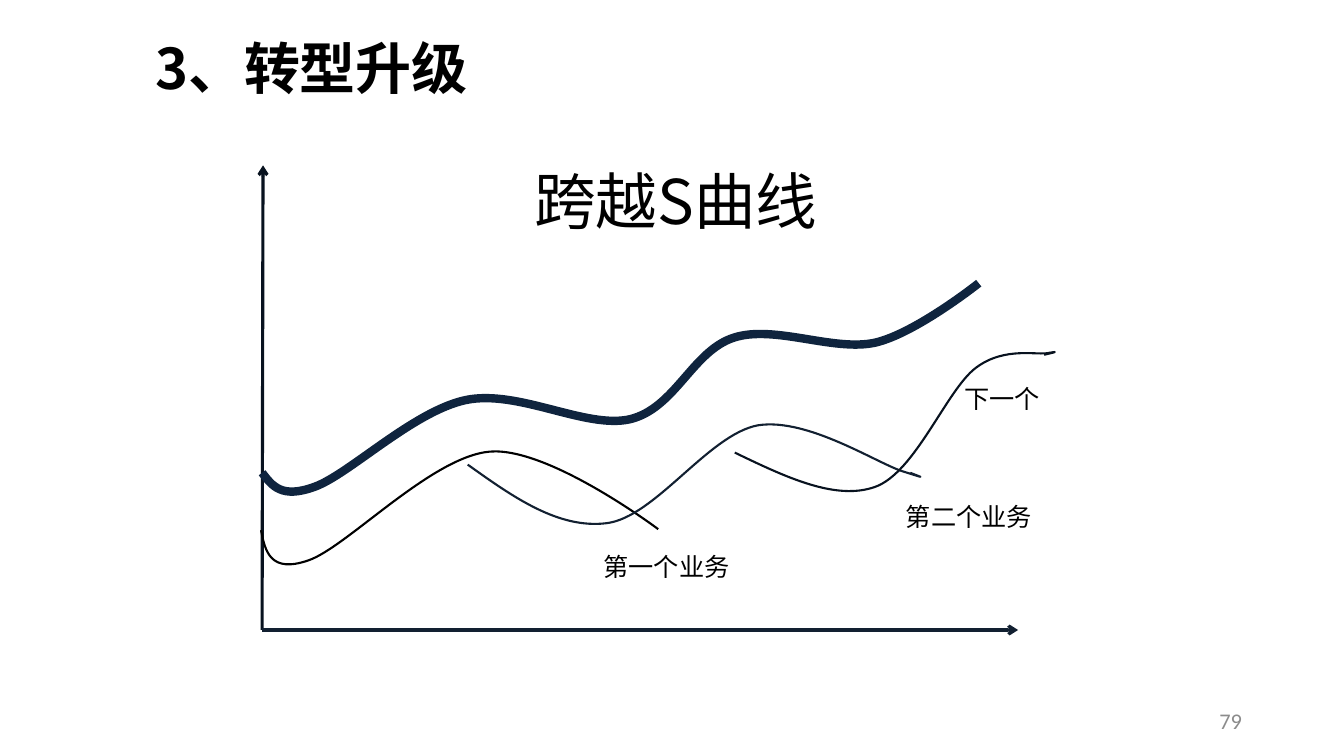
import pptx
import pptx.util
import pptx.dml.color
import pptx.enum.shapes
import pptx.enum.text
import pptx.oxml.ns
import pptx.oxml.xmlchemy

Pt = pptx.util.Pt
qn = pptx.oxml.ns.qn
make = pptx.oxml.xmlchemy.OxmlElement
Align = pptx.enum.text.PP_ALIGN
Anchor = pptx.enum.text.MSO_ANCHOR
HAN = "Noto Sans CJK SC"

TREND = [
    (187.2, 337.7), (194.4, 347), (200.9, 356.4), (224.6, 347.8),
    (249.1, 339.1), (295.2, 293.8), (332.6, 285.8),
    (370.1, 277.9), (418.3, 306.7), (450, 299.5),
    (482.4, 291.6), (494.6, 250.6), (524.2, 241.2),
    (553, 231.8), (595.4, 251.3), (625, 244.8),
    (653.8, 238.3), (699.1, 202.3), (699.1, 202.3),
]
FIRST = [
    (186.5, 378.7), (189.4, 393.8), (193, 409.7), (220.3, 400.3),
    (247.7, 391), (308.2, 326.2), (349.9, 322.6),
    (391.7, 319), (470.2, 378), (470.2, 378),
]
SECOND = [
    (334.1, 331.9), (366.5, 355), (398.9, 378), (433.4, 373.7),
    (468, 369.4), (506.2, 310.3), (541.4, 303.8),
    (577.4, 298.1), (627.8, 331.9), (645.8, 337),
    (663.8, 342.7), (657.4, 340.6), (650.2, 337.7),
]
NEXT = [
    (524.9, 323.3), (560.9, 340.6), (596.9, 357.8), (625, 347.8),
    (653.8, 337.7), (676.1, 278.6), (697, 262.8),
    (717.8, 247), (741.6, 254.2), (749.5, 252),
    (758.2, 250.6), (751.7, 252), (745.9, 253.4),
]


def paint(color, tone):
    color.rgb = pptx.dml.color.RGBColor.from_string(tone)


def stroke(line, tone, width):
    paint(line.color, tone)
    line.width = Pt(width)


def add_text(slide, words, box, size, align=Align.LEFT, anchor=Anchor.MIDDLE,
             font=HAN, tone="000000", bold=False):
    shape = slide.shapes.add_textbox(*map(Pt, box))
    frame = shape.text_frame
    frame.word_wrap = True
    frame.vertical_anchor = anchor
    frame.text = words
    frame.paragraphs[0].alignment = align
    run = frame.paragraphs[0].runs[0]
    run.font.name = font
    run.font.size = Pt(size)
    run.font.bold = bold
    paint(run.font.color, tone)
    east = make("a:ea")
    east.set("typeface", font)
    run.font._element.find(qn("a:latin")).addnext(east)
    return frame


def add_label(slide, words, left, top, width):
    frame = add_text(slide, words, (left, top, width, 29), 18, anchor=Anchor.TOP)
    frame.auto_size = pptx.enum.text.MSO_AUTO_SIZE.SHAPE_TO_FIT_TEXT


def add_axis(slide, start, end, tone):
    kind = pptx.enum.shapes.MSO_CONNECTOR.STRAIGHT
    axis = slide.shapes.add_connector(kind, *map(Pt, start + end))
    stroke(axis.line, tone, 2.25)
    tail = make("a:tailEnd")
    tail.set("type", "arrow")
    axis.line._get_or_add_ln().append(tail)
    axis._element.spPr.append(make("a:effectLst"))


def add_curve(slide, points, tone, width):
    spots = [(Pt(x), Pt(y)) for x, y in points]
    pen = slide.shapes.build_freeform(*spots[0])
    pen.add_line_segments(spots[1:], close=False)
    curve = pen.convert_to_shape()
    curve.shadow.inherit = False
    curve.fill.background()
    stroke(curve.line, tone, width)
    steps = curve._element.findall(".//" + qn("a:lnTo"))
    for i in range(0, len(steps), 3):
        bend = make("a:cubicBezTo")
        steps[i].addprevious(bend)
        for step in steps[i:i + 3]:
            bend.append(step[0])
            step.getparent().remove(step)


def main():
    deck = pptx.Presentation()
    deck.slide_width, deck.slide_height = Pt(960), Pt(540)
    slide = deck.slides.add_slide(deck.slide_layouts[6])

    add_text(slide, "跨越S曲线", (324.7, 112.3, 316, 60.5), 44, Align.CENTER)
    add_axis(slide, (187.2, 450), (187.9, 118.1), "08121F")
    add_axis(slide, (187.2, 450), (727.2, 450), "122031")
    add_curve(slide, TREND, "0F243E", 6)
    add_curve(slide, FIRST, "000000", 1.5)
    add_curve(slide, SECOND, "122031", 1.5)
    add_curve(slide, NEXT, "08121F", 1.5)
    add_label(slide, "第一个业务", 424, 390.2, 113.8)
    add_label(slide, "第二个业务", 640, 354.2, 113.8)
    add_label(slide, "下一个", 681.8, 270, 84.2)
    add_text(slide, "79", (678.2, 500.4, 216, 28.8), 16, Align.RIGHT,
             font="Calibri", tone="8C8C8C")
    add_text(slide, "3、转型升级", (103.7, 11.5, 506.2, 73.4), 40, bold=True)
    deck.save("out.pptx")


if __name__ == "__main__":
    main()
